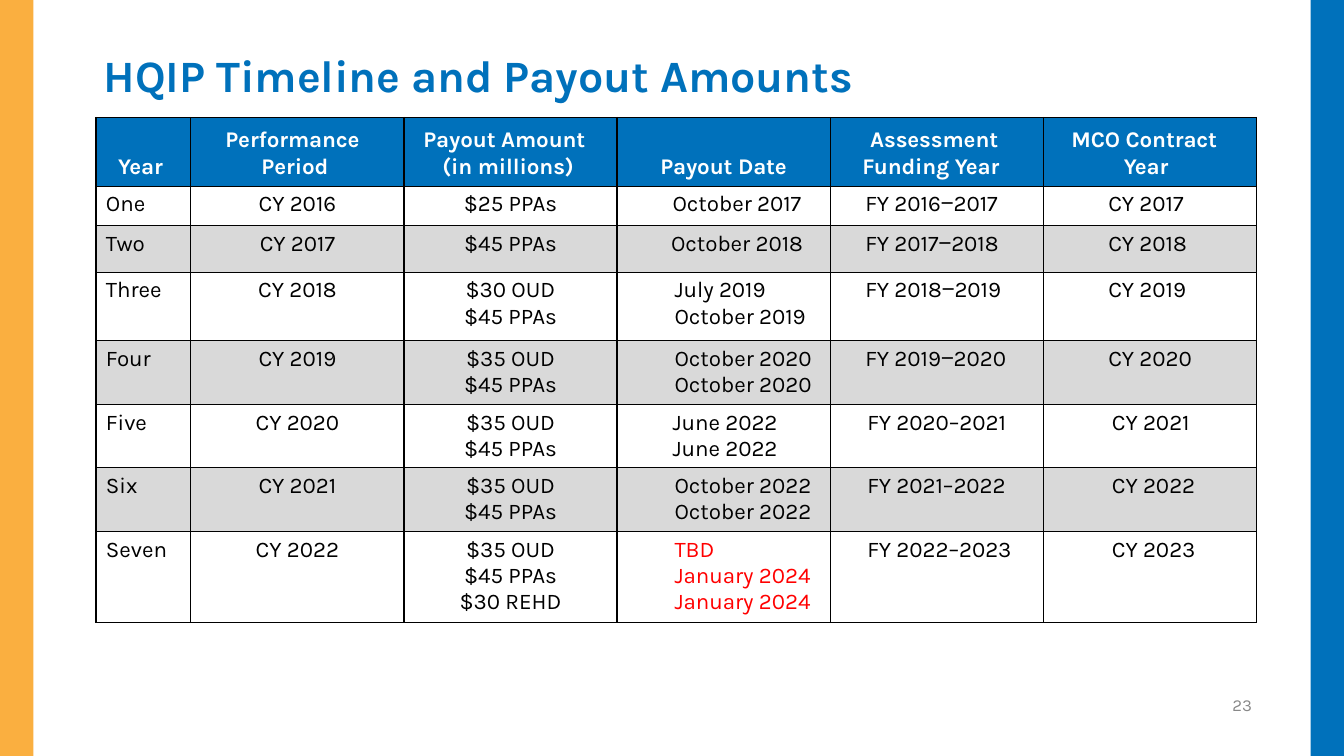
"""Build the HQIP timeline and payout amounts slide."""
from dataclasses import dataclass

import pptx
import pptx.dml.color
import pptx.enum.shapes
import pptx.enum.text
import pptx.oxml
import pptx.oxml.ns
import pptx.util

Cm = pptx.util.Cm
Align = pptx.enum.text.PP_ALIGN


@dataclass(frozen=True)
class Style:
    size: float
    color: str
    bold: bool = False
    tracking: int = 0


@dataclass(frozen=True)
class Theme:
    font: str = "Karla"
    blue: str = "0071BB"
    orange: str = "FAAF40"
    band: str = "D9D9D9"
    rule: str = "000000"
    rule_width: float = 1
    title: Style = Style(32, "0071BB", True, -10)
    header: Style = Style(16, "FFFFFF", True, -5)
    body: Style = Style(16, "000000")
    pending: Style = Style(16, "FF0000")
    folio: Style = Style(12, "888888")


@dataclass(frozen=True)
class Column:
    width: float
    heading: tuple[str, ...]
    heading_left: float
    heading_first: float = 0
    heading_align: Align = Align.LEFT


@dataclass(frozen=True)
class Term:
    height: float
    year: str
    period: str
    amounts: tuple[str, ...]
    dates: tuple[str, ...]
    date_left: float
    funding: str
    funding_left: float
    contract: str
    contract_left: float
    date_style: Style = Theme.body


@dataclass(frozen=True)
class Bar:
    left: float
    color: str


@dataclass(frozen=True)
class Label:
    text: str
    left: float
    top: float
    width: float
    height: float
    style: Style


THEME = Theme()
PAGE_WIDTH, PAGE_HEIGHT, BAR_WIDTH = 33.87, 19.05, 0.84
HEADER_HEIGHT = 1.73
ONE_LINE_TOP, TWO_LINE_TOP, BODY_TOP = 0.91, 0.25, 0.13

BARS = [Bar(PAGE_WIDTH - BAR_WIDTH, THEME.blue), Bar(0, THEME.orange)]
LABELS = [
    Label("HQIP Timeline and Payout Amounts", 2.62, 1.2, 25.45, 1.4, THEME.title),
    Label("23", 31.06, 17.5, 0.9, 0.53, THEME.folio),
]
COLUMNS = [
    Column(2.39, ("Year",), 0.56),
    Column(5.37, ("Performance", "Period"), 1.78, -0.91),
    Column(5.37, ("Payout Amount", "(in millions)"), 0.97, -0.48),
    Column(5.37, ("Payout Date",), 0, 0, Align.CENTER),
    Column(5.37, ("Assessment", "Funding Year"), 0.81, 0.2),
    Column(5.37, ("MCO Contract", "Year"), 2.03, -1.32),
]
TERMS = [
    Term(1, "One", "CY 2016", ("$25 PPAs",), ("October 2017",), 1.4,
         "FY 2016‒2017", 0.89, "CY 2017", 1.64),
    Term(1.17, "Two", "CY 2017", ("$45 PPAs",), ("October 2018",), 1.36,
         "FY 2017‒2018", 0.89, "CY 2018", 1.64),
    Term(1.73, "Three", "CY 2018", ("$30 OUD", "$45 PPAs"), ("July 2019", "October 2019"), 1.45,
         "FY 2018‒2019", 0.89, "CY 2019", 1.64),
    Term(1.6, "Four", "CY 2019", ("$35 OUD", "$45 PPAs"), ("October 2020", "October 2020"), 1.45,
         "FY 2019‒2020", 0.89, "CY 2020", 1.64),
    Term(1.6, "Five", "CY 2020", ("$35 OUD", "$45 PPAs"), ("June 2022", "June 2022"), 1.4,
         "FY 2020–2021", 0.94, "CY 2021", 1.73),
    Term(1.6, "Six", "CY 2021", ("$35 OUD", "$45 PPAs"), ("October 2022", "October 2022"), 1.45,
         "FY 2021–2022", 0.94, "CY 2022", 1.73),
    Term(2.29, "Seven", "CY 2022", ("$35 OUD", "$45 PPAs", "$30 REHD"),
         ("TBD", "January 2024", "January 2024"), 1.45,
         "FY 2022–2023", 0.94, "CY 2023", 1.73, THEME.pending),
]


def rgb(color: str) -> pptx.dml.color.RGBColor:
    """Turn a hex string into a colour."""
    return pptx.dml.color.RGBColor.from_string(color)


def add_span(para, text: str, style: Style) -> None:
    """Add one styled run."""
    span = para.add_run()
    span.text = text
    span.font.name = THEME.font
    span.font.size = pptx.util.Pt(style.size)
    span.font.bold = style.bold
    span.font.color.rgb = rgb(style.color)
    if style.tracking:
        span.font._element.set("spc", str(style.tracking))


def set_indent(para, left: float, first: float = 0) -> None:
    """Set the left and first-line indents of a paragraph."""
    properties = para._p.get_or_add_pPr()
    properties.set("marL", str(Cm(left)))
    properties.set("indent", str(Cm(first)))


def add_bar(page, bar: Bar) -> None:
    """Draw a full-height edge bar."""
    shape = page.shapes.add_shape(pptx.enum.shapes.MSO_SHAPE.RECTANGLE, Cm(bar.left), 0,
                                  Cm(BAR_WIDTH), Cm(PAGE_HEIGHT))
    shape.shadow.inherit = False
    shape.fill.solid()
    shape.fill.fore_color.rgb = rgb(bar.color)
    shape.line.fill.background()


def add_label(page, label: Label) -> None:
    """Add a text box without margins."""
    box = page.shapes.add_textbox(Cm(label.left), Cm(label.top), Cm(label.width), Cm(label.height))
    frame = box.text_frame
    frame.word_wrap = True
    frame.margin_left = frame.margin_top = frame.margin_right = frame.margin_bottom = 0
    add_span(frame.paragraphs[0], label.text, label.style)


def format_cell(cell, top: float, fill: str | None) -> None:
    """Set the margins, borders and fill of a cell."""
    cell.margin_left = cell.margin_right = cell.margin_bottom = 0
    cell.margin_top = Cm(top)
    properties = cell._tc.get_or_add_tcPr()
    for side in ("lnL", "lnR", "lnT", "lnB"):
        properties.append(pptx.oxml.parse_xml(
            f'<a:{side} {pptx.oxml.ns.nsdecls("a")} w="{pptx.util.Pt(THEME.rule_width)}">'
            f'<a:solidFill><a:srgbClr val="{THEME.rule}"/></a:solidFill></a:{side}>'))
    if fill:
        cell.fill.solid()
        cell.fill.fore_color.rgb = rgb(fill)
    else:
        cell.fill.background()


def fill_heading(cell, column: Column) -> None:
    """Write a column heading."""
    format_cell(cell, ONE_LINE_TOP if len(column.heading) == 1 else TWO_LINE_TOP, THEME.blue)
    para = cell.text_frame.paragraphs[0]
    set_indent(para, column.heading_left, column.heading_first)
    para.alignment = column.heading_align
    for index, line in enumerate(column.heading):
        if index:
            para.add_line_break()
        add_span(para, line, THEME.header)


def fill_term(cells, term: Term, fill: str | None) -> None:
    """Write one program year across a row."""
    entries = [
        ((term.year,), 0.25, Align.LEFT, THEME.body),
        ((term.period,), 0, Align.CENTER, THEME.body),
        (term.amounts, 0, Align.CENTER, THEME.body),
        (term.dates, term.date_left, Align.LEFT, term.date_style),
        ((term.funding,), term.funding_left, Align.LEFT, THEME.body),
        ((term.contract,), term.contract_left, Align.LEFT, THEME.body),
    ]
    for cell, (lines, left, align, style) in zip(cells, entries):
        format_cell(cell, BODY_TOP, fill)
        for index, line in enumerate(lines):
            frame = cell.text_frame
            para = frame.add_paragraph() if index else frame.paragraphs[0]
            set_indent(para, left)
            para.alignment = align
            add_span(para, line, style)


def add_timeline(page) -> None:
    """Add the payout timeline table."""
    heights = [HEADER_HEIGHT, *(term.height for term in TERMS)]
    table = page.shapes.add_table(len(heights), len(COLUMNS), Cm(2.42), Cm(2.96),
                                  Cm(sum(column.width for column in COLUMNS)),
                                  Cm(sum(heights))).table
    table.first_row = table.horz_banding = False
    for row, height in zip(table.rows, heights):
        row.height = Cm(height)
    for index, column in enumerate(COLUMNS):
        table.columns[index].width = Cm(column.width)
        fill_heading(table.cell(0, index), column)
    for index, term in enumerate(TERMS):
        fill_term(table.rows[index + 1].cells, term, THEME.band if index % 2 else None)


def main() -> None:
    """Build and save the deck."""
    deck = pptx.Presentation()
    deck.slide_width, deck.slide_height = Cm(PAGE_WIDTH), Cm(PAGE_HEIGHT)
    page = deck.slides.add_slide(deck.slide_layouts[6])
    for bar in BARS:
        add_bar(page, bar)
    for label in LABELS:
        add_label(page, label)
    add_timeline(page)
    deck.save("out.pptx")


if __name__ == "__main__":
    main()
